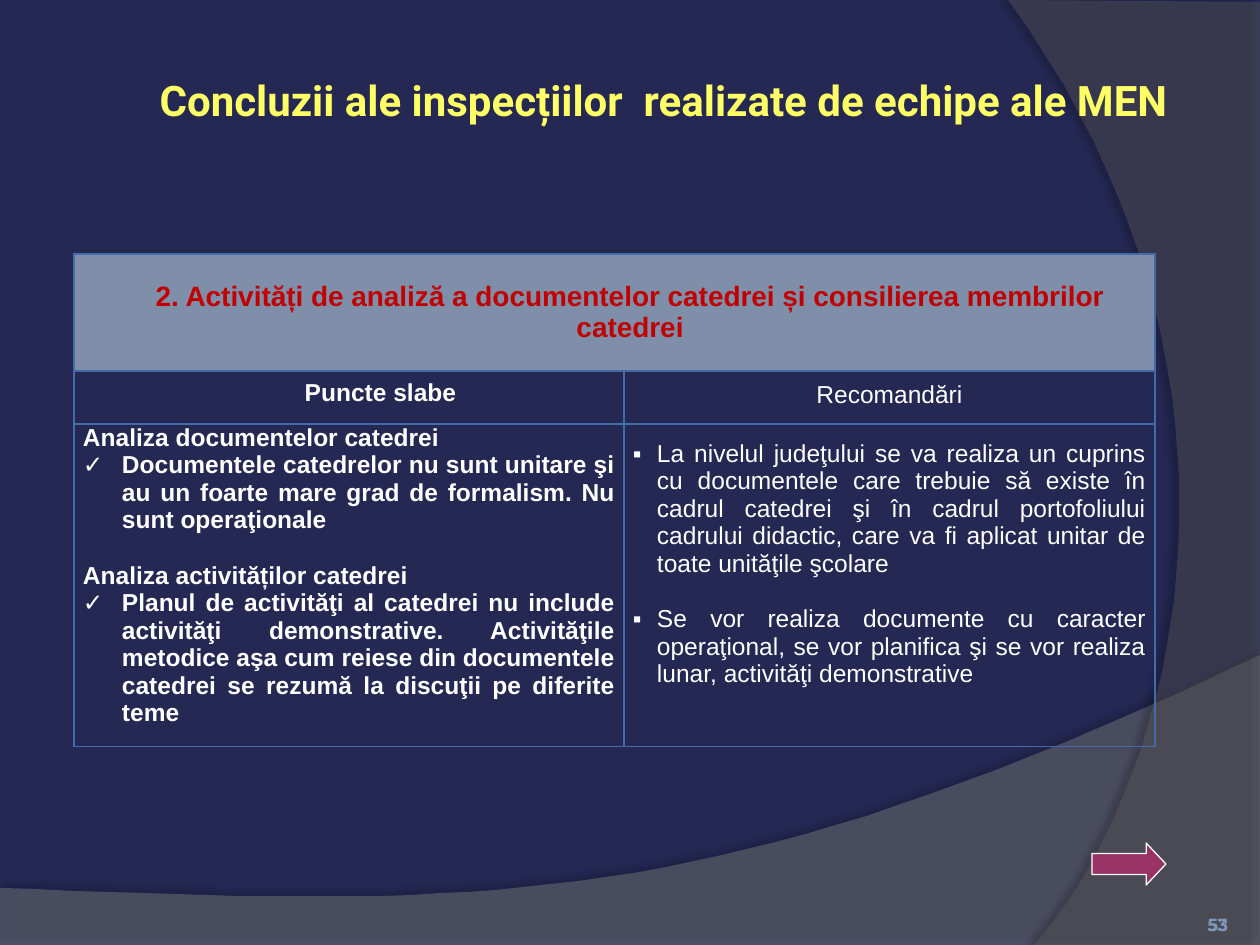
from pptx import Presentation
from pptx.dml.color import RGBColor
from pptx.enum.shapes import MSO_SHAPE as Shape
from pptx.enum.text import MSO_ANCHOR as Anchor, PP_ALIGN as Align
from pptx.oxml.ns import qn
from pptx.util import Pt
from lxml.etree import SubElement

PX = 914400 / 126
NAVY = RGBColor(0x24, 0x28, 0x52)
GRAY = RGBColor(0x7F, 0x7F, 0x7F)
DARK_GRAY = RGBColor(0x5E, 0x5E, 0x5E)
BLACK = RGBColor(0, 0, 0)
WHITE = RGBColor(0xFF, 0xFF, 0xFF)
YELLOW = RGBColor(0xFF, 0xFF, 0x66)
RED = RGBColor(0xC0, 0, 0)
STEEL = RGBColor(0x7F, 0x8F, 0xA9)
NUMBER_BLUE = RGBColor(0x7F, 0x96, 0xB8)
BORDER_BLUE = RGBColor(0x44, 0x6B, 0xA9)
PLUM = RGBColor(0x99, 0x33, 0x66)

WEAK_POINTS = [
    ("Analiza documentelor catedrei", None),
    ("Documentele catedrelor nu sunt unitare şi au un foarte mare grad de "
     "formalism. Nu sunt operaţionale", "✓"),
    ("Analiza activităților catedrei", None),
    ("Planul de activităţi al catedrei nu include activităţi demonstrative. "
     "Activităţile metodice aşa cum reiese din documentele catedrei se rezumă "
     "la discuţii pe diferite teme", "✓"),
]
ADVICE = [
    ("La nivelul judeţului se va realiza un cuprins cu documentele care trebuie "
     "să existe în cadrul catedrei şi în cadrul portofoliului cadrului didactic, "
     "care va fi aplicat unitar de toate unităţile şcolare", "▪"),
    ("Se vor realiza documente cu caracter operaţional, se vor planifica şi se "
     "vor realiza lunar, activităţi demonstrative", "▪"),
]


def px(length):
    return round(length * PX)


def add_color(parent, color, opacity=100):
    node = SubElement(parent, qn("a:srgbClr"), val=str(color))
    if opacity < 100:
        SubElement(node, qn("a:alpha"), val=str(opacity * 1000))


def curve(start, first, second, end, steps=40):
    for step in range(1, steps + 1):
        t = step / steps
        u = 1 - t
        yield tuple(u**3 * a + 3 * u * u * t * b + 3 * u * t * t * c + t**3 * d
                    for a, b, c, d in zip(start, first, second, end))


def add_swoosh(page, points, color, opacity, shadow_opacity, distance, angle):
    builder = page.shapes.build_freeform(*points[0], scale=PX)
    builder.add_line_segments(points[1:], close=True)
    swoosh = builder.convert_to_shape()
    swoosh.line.fill.background()
    swoosh.fill.solid()
    swoosh.fill.fore_color.rgb = color
    tint = swoosh.fill._xPr.find(qn("a:solidFill"))[0]
    SubElement(tint, qn("a:alpha"), val=str(opacity * 1000))
    swoosh.shadow.inherit = False
    effects = swoosh._element.spPr.find(qn("a:effectLst"))
    shadow = SubElement(effects, qn("a:outerShdw"), blurRad=str(Pt(4)),
                        dist=str(Pt(distance)), dir=str(angle * 60000))
    add_color(shadow, BLACK, shadow_opacity)


def add_backdrop(page, width, height):
    page.background.fill.solid()
    page.background.fill.fore_color.rgb = NAVY
    corner = (width, height)
    wave = curve((width, 655), (704, 919), (493, 906), (0, 888))
    add_swoosh(page, [(0, 888), (0, height), corner, (width, 655), *wave],
               GRAY, 45, 35, 3.5, 270)
    arc = curve((1034, height), (1178, 780), (1283, 378), (1008, 0))
    add_swoosh(page, [(width, 2), corner, (1034, height), *arc],
               DARK_GRAY, 40, 45, 4, 180)


def style_para(para, size, color, bold=False, align=Align.LEFT, font="Arial"):
    para.alignment = align
    for span in para.runs:
        span.font.size = Pt(size)
        span.font.name = font
        span.font.bold = bold
        span.font.color.rgb = color


def add_text(page, box, text, anchor, inset, **style):
    shape = page.shapes.add_textbox(*map(px, box))
    frame = shape.text_frame
    frame.word_wrap = True
    frame.vertical_anchor = anchor
    frame.margin_left = frame.margin_right = px(inset)
    frame.margin_top = frame.margin_bottom = px(inset)
    frame.text = text
    style_para(frame.paragraphs[0], **style)


def indent(para, left, hanging=0, bullet=None):
    props = para._p.get_or_add_pPr()
    props.set("marL", str(px(left)))
    props.set("indent", str(-px(hanging)))
    if bullet:
        SubElement(props, qn("a:buFont"), typeface="Arial")
        SubElement(props, qn("a:buChar"), char=bullet)


def style_cell(cell, side, top):
    cell.margin_left = cell.margin_right = px(side)
    cell.margin_top, cell.margin_bottom = px(top), 0
    props = cell._tc.get_or_add_tcPr()
    for edge in ("a:lnL", "a:lnR", "a:lnT", "a:lnB"):
        line = SubElement(props, qn(edge), w=str(Pt(0.75)))
        add_color(SubElement(line, qn("a:solidFill")), BORDER_BLUE)
    cell.fill.background()


def fill_heading(cell, text, left, **style):
    cell.text = text
    para = cell.text_frame.paragraphs[0]
    style_para(para, align=Align.CENTER, **style)
    indent(para, left)


def fill_list(cell, items, hanging, bold, gap_before):
    cell.text = "\n".join(text for text, _ in items)
    for index, (para, (_, bullet)) in enumerate(zip(cell.text_frame.paragraphs, items)):
        style_para(para, 14, WHITE, bold, Align.JUSTIFY if bullet else Align.LEFT)
        if index == gap_before:
            para.space_before = Pt(16)
        if bullet:
            indent(para, hanging, hanging, bullet)


def add_findings(page, box):
    columns, rows = (550, 531), (117, 53, 318)
    table = page.shapes.add_table(3, 2, *map(px, box)).table
    table.first_row = table.horz_banding = False
    for column, width in zip(table.columns, columns):
        column.width = px(width)
    for row, height in zip(table.rows, rows):
        row.height = px(height)
    insets = [[(9, 0), (9, 0)], [(8, 8), (8, 10)], [(9, 0), (9, 16)]]
    for row, row_insets in zip(table.rows, insets):
        for cell, (side, top) in zip(row.cells, row_insets):
            style_cell(cell, side, top)
    banner = table.cell(0, 0)
    banner.merge(table.cell(0, 1))
    banner.vertical_anchor = Anchor.MIDDLE
    banner.fill.solid()
    banner.fill.fore_color.rgb = STEEL
    fill_heading(banner, "2. Activități de analiză a documentelor catedrei și "
                 "consilierea membrilor catedrei", 31, size=16, color=RED, bold=True)
    fill_heading(table.cell(1, 0), "Puncte slabe", 63, size=14, color=WHITE, bold=True)
    fill_heading(table.cell(1, 1), "Recomandări", 0, size=14, color=WHITE)
    fill_list(table.cell(2, 0), WEAK_POINTS, 39, True, 2)
    fill_list(table.cell(2, 1), ADVICE, 24, False, 1)


def add_next_arrow(page, box):
    arrow = page.shapes.add_shape(Shape.RIGHT_ARROW, *map(px, box))
    arrow.adjustments[1] = 0.47
    arrow.shadow.inherit = False
    arrow.fill.solid()
    arrow.fill.fore_color.rgb = PLUM
    arrow.line.color.rgb = WHITE
    arrow.line.width = Pt(0.75)


def add_page_number(page, box):
    for font, bold in (("Montserrat", True), ("Arial", False)):
        add_text(page, box, "53", Anchor.BOTTOM, 0, size=10, color=NUMBER_BLUE,
                 bold=bold, align=Align.RIGHT, font=font)


def main():
    deck = Presentation()
    deck.slide_width, deck.slide_height = px(1260), px(945)
    page = deck.slides.add_slide(deck.slide_layouts[6])
    add_backdrop(page, 1260, 945)
    add_text(page, (81, 21, 1165, 158),
             "Concluzii ale inspecțiilor  realizate de echipe ale MEN",
             Anchor.MIDDLE, 6, size=24, color=YELLOW, bold=True,
             align=Align.CENTER, font="Roboto")
    add_page_number(page, (1124, 885, 104, 50))
    add_next_arrow(page, (1092, 843, 74, 42))
    add_findings(page, (74, 254, 1081, 488))
    deck.save("out.pptx")


if __name__ == "__main__":
    main()
